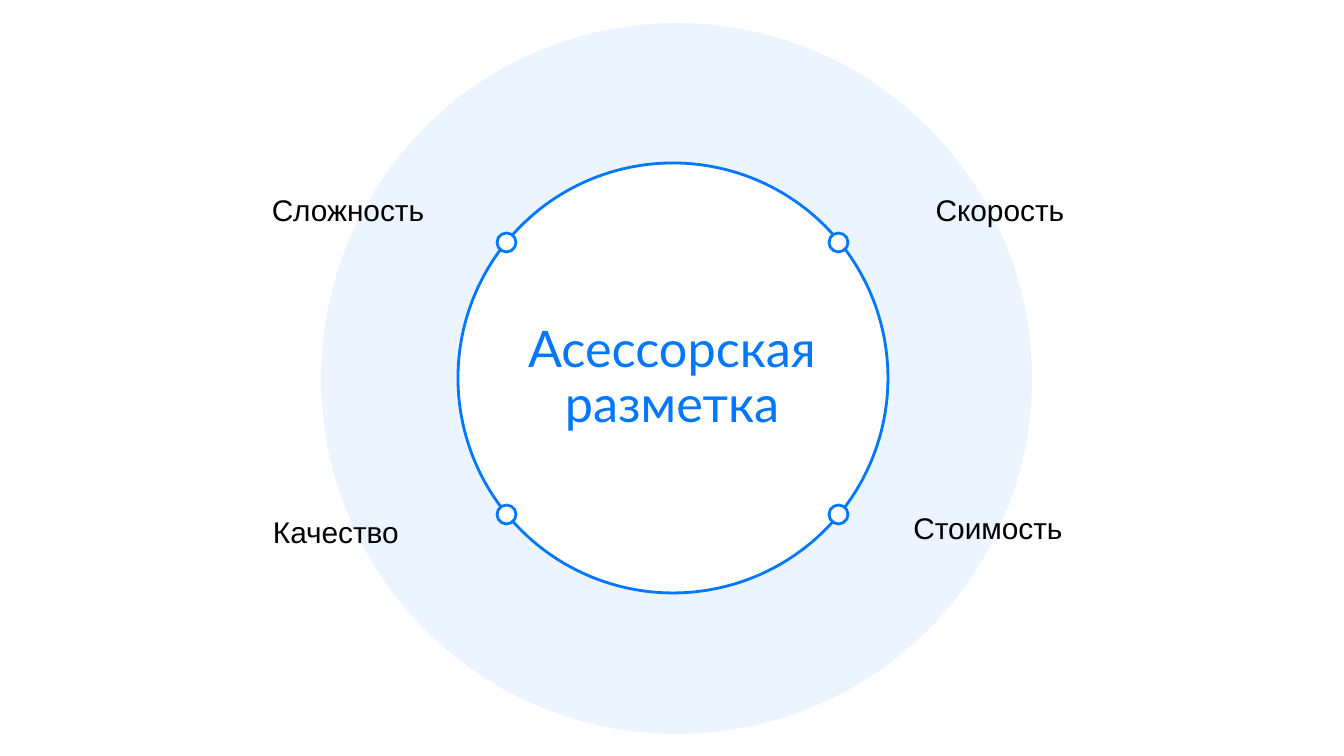
from itertools import product

from lxml.etree import SubElement
from pptx import Presentation
from pptx.dml.color import RGBColor
from pptx.enum.shapes import MSO_SHAPE as Shape
from pptx.enum.text import MSO_ANCHOR as Anchor, PP_ALIGN as Align
from pptx.oxml.ns import qn
from pptx.util import Pt

EMU_PER_PX = 9144000 / 1344
BLUE = "0077FF"
WHITE = "FFFFFF"
BLACK = "000000"


def px(length):
    return round(length * EMU_PER_PX)


def color(value):
    return RGBColor.from_string(value)


class Diagram:
    line_width = Pt(1.5)

    def __init__(self, slide):
        self.shapes = slide.shapes

    def circle(self, left, top, diameter, fill, outline=None, opacity=100):
        circle = self.shapes.add_shape(
            Shape.OVAL, px(left), px(top), px(diameter), px(diameter))
        circle.shadow.inherit = False
        circle.fill.solid()
        circle.fill.fore_color.rgb = color(fill)
        if opacity < 100:
            tint = circle.fill._xPr.find(qn("a:solidFill"))[0]
            SubElement(tint, qn("a:alpha"), val=str(opacity * 1000))
        if outline:
            circle.line.color.rgb = color(outline)
            circle.line.width = self.line_width
        else:
            circle.line.fill.background()

    def text(self, box, wording, font, size, ink, margins=(0, 0, 0, 0),
             anchor=Anchor.TOP, spacing=1.0, wrap=False):
        frame = self.shapes.add_textbox(*map(px, box)).text_frame
        frame.word_wrap = wrap
        frame.vertical_anchor = anchor
        (frame.margin_left, frame.margin_top,
         frame.margin_right, frame.margin_bottom) = map(px, margins)
        paragraph = frame.paragraphs[0]
        paragraph.text = wording
        paragraph.alignment = Align.CENTER
        paragraph.line_spacing = spacing
        paragraph.font.name = font
        paragraph.font.size = Pt(size)
        paragraph.font.color.rgb = color(ink)

    def title(self, box, wording):
        self.text(box, wording, "Lato", 27, BLUE,
                  anchor=Anchor.MIDDLE, spacing=0.9, wrap=True)

    def label(self, left, top, width, wording, spacing=1.0):
        self.text((left, top, width, 47), wording, "Arial", 16, BLACK,
                  margins=(0, 5, 10, 5), spacing=spacing)


def main():
    deck = Presentation()
    deck.slide_width, deck.slide_height = px(1344), px(756)
    diagram = Diagram(deck.slides.add_slide(deck.slide_layouts[6]))

    diagram.circle(321, 23, 711, BLUE, opacity=8)
    diagram.circle(458, 163, 430, WHITE, BLUE)
    diagram.title((475, 290, 394, 177), "Асессорская разметка")
    for left, top in product((497, 829), (233, 505)):
        diagram.circle(left, top, 19, WHITE, BLUE)

    upper, lower = 187, 505
    diagram.label(935, upper, 140, "Скорость")
    diagram.label(911, lower, 164, "Стоимость")
    diagram.label(271, upper, 164, "Сложность")
    diagram.label(271, lower, 140, "Качество", spacing=1.1)

    deck.save("out.pptx")


if __name__ == "__main__":
    main()
